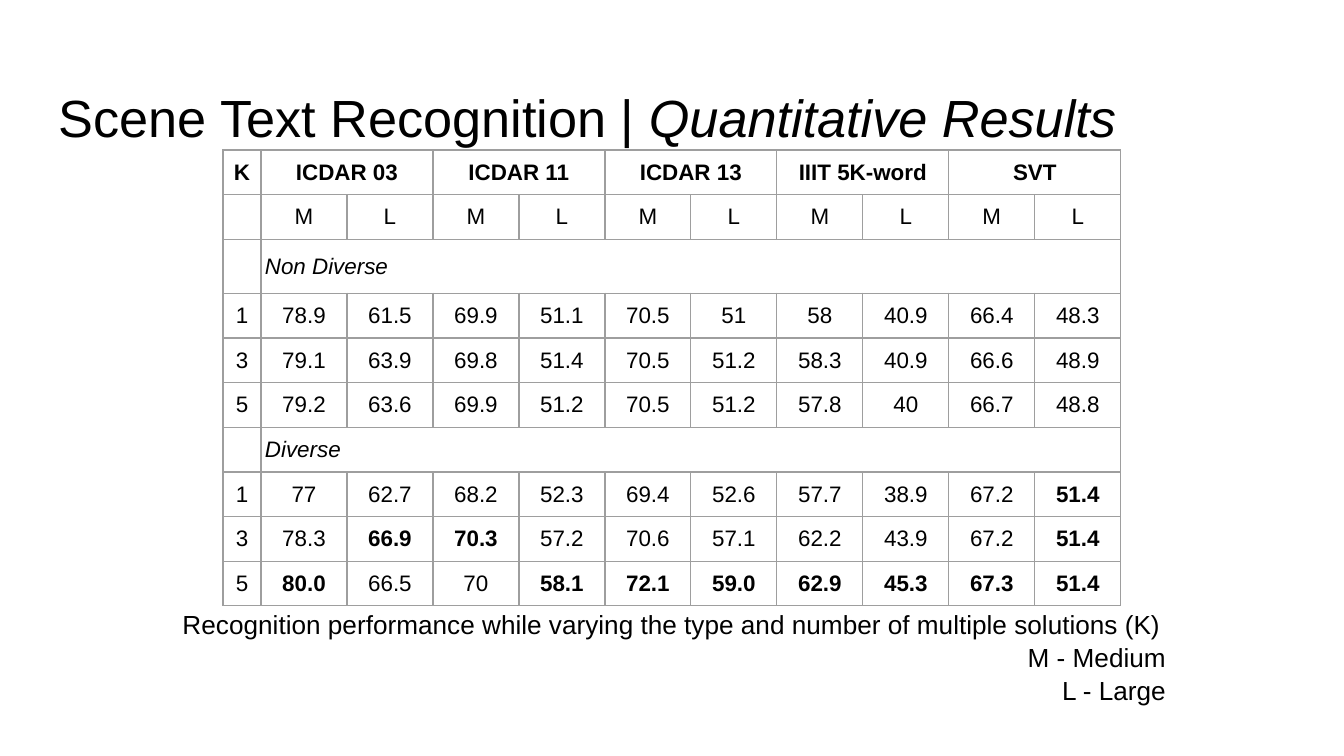
from lxml import etree
from pptx import Presentation
from pptx import util as u
from pptx.dml import color
from pptx.enum import text
from pptx.oxml import ns

SCALE = 9144000 / 1344
BLACK, GRID = "000000", "9E9E9E"
CENTER, LEFT, RIGHT = text.PP_ALIGN.CENTER, text.PP_ALIGN.LEFT, text.PP_ALIGN.RIGHT
DATASETS = ["ICDAR 03", "ICDAR 11", "ICDAR 13", "IIIT 5K-word", "SVT"]
SECTIONS = {
    "Non Diverse": [
        "1 78.9 61.5 69.9 51.1 70.5 51 58 40.9 66.4 48.3",
        "3 79.1 63.9 69.8 51.4 70.5 51.2 58.3 40.9 66.6 48.9",
        "5 79.2 63.6 69.9 51.2 70.5 51.2 57.8 40 66.7 48.8",
    ],
    "Diverse": [
        "1 77 62.7 68.2 52.3 69.4 52.6 57.7 38.9 67.2 51.4*",
        "3 78.3 66.9* 70.3* 57.2 70.6 57.1 62.2 43.9 67.2 51.4*",
        "5 80.0* 66.5 70 58.1* 72.1* 59.0* 62.9* 45.3* 67.3* 51.4*",
    ],
}


def px(length):
    """Turn pixels into EMU."""
    return u.Emu(round(length * SCALE))


def rgb(value):
    """Turn a hex string into a colour."""
    return color.RGBColor.from_string(value)


def write(paragraph, words, size=12, bold=False, italic=False, align=LEFT):
    """Add a formatted run to a paragraph."""
    paragraph.alignment = align
    run = paragraph.add_run()
    run.text = words
    font = run.font
    font.name, font.size, font.bold, font.italic = "Arial", u.Pt(size), bold, italic
    font.color.rgb = rgb(BLACK)


def add_box(slide, left, top, width, height, anchor, inset_top=13, inset_bottom=13):
    """Add a wrapping text box and return its text frame."""
    frame = slide.shapes.add_textbox(px(left), px(top), px(width), px(height)).text_frame
    frame.word_wrap = True
    frame.vertical_anchor = anchor
    frame.margin_left = frame.margin_right = px(13)
    frame.margin_top, frame.margin_bottom = px(inset_top), px(inset_bottom)
    return frame


def style_cell(cell):
    """Give a cell its margins, thin grey borders and no fill."""
    cell.vertical_anchor = text.MSO_ANCHOR.MIDDLE
    cell.margin_left = cell.margin_right = px(4)
    cell.margin_top = cell.margin_bottom = px(2)
    properties = cell._tc.get_or_add_tcPr()
    for side in ("a:lnL", "a:lnR", "a:lnT", "a:lnB"):
        border = etree.SubElement(properties, ns.qn(side), w=str(u.Pt(0.75)))
        fill = etree.SubElement(border, ns.qn("a:solidFill"))
        etree.SubElement(fill, ns.qn("a:srgbClr"), val=GRID)
    cell.fill.background()


def add_grid(slide, left, top, column_widths, row_heights):
    """Add an empty bordered table."""
    size = px(sum(column_widths)), px(sum(row_heights))
    table = slide.shapes.add_table(
        len(row_heights), len(column_widths), px(left), px(top), *size).table
    table.first_row = table.horz_banding = False
    for column, width in zip(table.columns, column_widths):
        column.width = px(width)
    for row, height in zip(table.rows, row_heights):
        row.height = px(height)
    for cell in table.iter_cells():
        style_cell(cell)
    return table


def fill_cell(table, row, column, words, span=1, align=CENTER, **style):
    """Write into a cell, merged across span columns."""
    cell = table.cell(row, column)
    if span > 1:
        cell.merge(table.cell(row, column + span - 1))
    write(cell.text_frame.paragraphs[0], words, align=align, **style)


def add_results(slide):
    """Add the table of recognition results."""
    section_height = 54
    plain_height = (456 - section_height) / 9
    heights = [plain_height] * 2 + [section_height] + [plain_height] * 7
    table = add_grid(slide, 223, 150, [38] + [86] * 10, heights)
    fill_cell(table, 0, 0, "K", bold=True)
    for index, dataset in enumerate(DATASETS):
        medium = 1 + 2 * index
        fill_cell(table, 0, medium, dataset, span=2, bold=True)
        fill_cell(table, 1, medium, "M")
        fill_cell(table, 1, medium + 1, "L")
    row = 2
    for section, results in SECTIONS.items():
        fill_cell(table, row, 1, section, span=10, align=LEFT, italic=True)
        for row, result in enumerate(results, row + 1):
            for column, score in enumerate(result.split()):
                fill_cell(table, row, column, score.rstrip("*"), bold=score.endswith("*"))
        row += 1


def add_title(slide):
    """Add the heading with its italic second half."""
    heading = add_box(slide, 46, 66, 1253, 85, text.MSO_ANCHOR.TOP,
                      inset_top=19, inset_bottom=0).paragraphs[0]
    write(heading, "Scene Text Recognition | ", size=28)
    write(heading, "Quantitative Results", size=28, italic=True)


def add_caption(slide):
    """Add the caption and the key to the column letters."""
    frame = add_box(slide, 165, 606, 1014, 101, text.MSO_ANCHOR.MIDDLE)
    lines = [
        ("Recognition performance while varying the type and number of multiple solutions (K)",
         CENTER),
        ("M - Medium", RIGHT),
        ("L - Large", RIGHT),
    ]
    for index, (line, align) in enumerate(lines):
        paragraph = frame.add_paragraph() if index else frame.paragraphs[0]
        paragraph.line_spacing = 1.05
        write(paragraph, line, size=14, align=align)


def main():
    """Build the slide and save it."""
    deck = Presentation()
    deck.slide_width, deck.slide_height = px(1344), px(756)
    slide = deck.slides.add_slide(deck.slide_layouts[6])
    add_title(slide)
    add_results(slide)
    add_caption(slide)
    deck.save("out.pptx")


if __name__ == "__main__":
    main()
